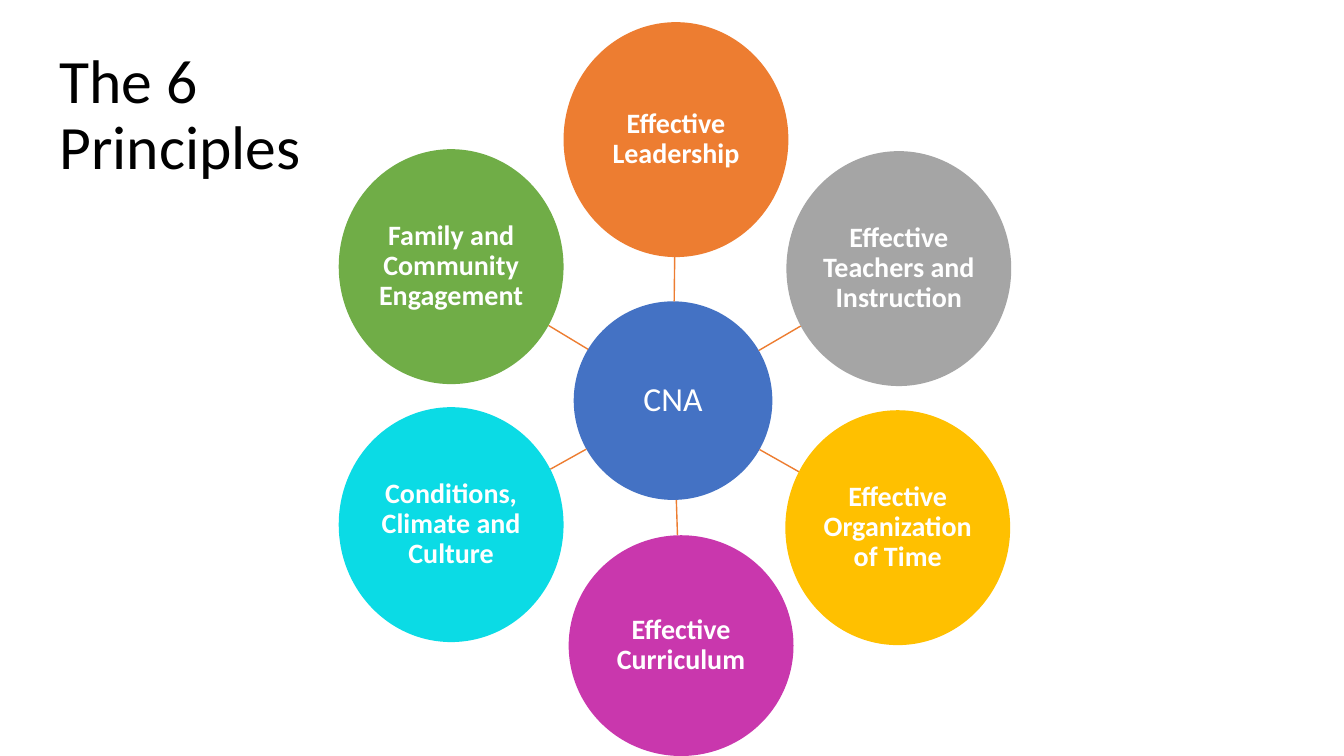
from dataclasses import dataclass
from math import hypot

from lxml import etree
from pptx import Presentation
from pptx.dml.color import RGBColor
from pptx.enum.shapes import MSO_CONNECTOR, MSO_SHAPE
from pptx.enum.text import MSO_ANCHOR, PP_ALIGN
from pptx.oxml.ns import qn
from pptx.util import Inches, Pt

OVAL = MSO_SHAPE.OVAL
LINE = MSO_CONNECTOR.STRAIGHT
MIDDLE = MSO_ANCHOR.MIDDLE
LEFT, CENTER = PP_ALIGN.LEFT, PP_ALIGN.CENTER
WIDE, HIGH = 13.33, 7.5


@dataclass(frozen=True)
class Theme:
    font: str = "Calibri"
    ink: str = "000000"
    light: str = "FFFFFF"
    hub: str = "4472C4"
    spoke: str = "ED7D31"
    title: int = 44
    core: int = 24
    label: int = 20
    thin: int = 1


THEME = Theme()

# Ovals: centre x, centre y, width, height in percent of the slide
HUB = (50.08, 53, 14.78, 26.27)
PETAL = (16.73, 31.07)
PETALS = [
    ("Effective Leadership", "ED7D31", (50.3, 18.47, *PETAL)),
    ("Effective Teachers and Instruction", "A5A5A5", (66.88, 35.53, *PETAL)),
    ("Effective Organization of Time", "FFC000", (66.8, 69.8, *PETAL)),
    ("Effective Curriculum", "C937AD", (50.68, 85.4, 16.73, 29.2)),
    ("Conditions, Climate and Culture", "0BDBE5", (33.57, 69.4, *PETAL)),
    ("Family and Community Engagement", "70AD47", (33.57, 35.27, *PETAL)),
]


def across(share):
    return Inches(WIDE * share / 100)


def down(share):
    return Inches(HIGH * share / 100)


def write(shape, text, *, size, color, bold=False, align=CENTER, inset=None):
    frame = shape.text_frame
    frame.word_wrap = True
    frame.vertical_anchor = MIDDLE
    if inset is not None:
        frame.margin_left = frame.margin_right = Inches(inset)
        frame.margin_top = frame.margin_bottom = Inches(inset)
    para = frame.paragraphs[0]
    para.alignment = align
    para.line_spacing = 0.9
    run = para.add_run()
    run.text = text
    run.font.name = THEME.font
    run.font.size = Pt(size)
    run.font.bold = bold
    run.font.color.rgb = RGBColor.from_string(color)


def add_oval(slide, text, fill, oval, **style):
    x, y, w, h = oval
    shape = slide.shapes.add_shape(
        OVAL, across(x - w / 2), down(y - h / 2), across(w), down(h))
    shape.shadow.inherit = False
    shape.fill.solid()
    shape.fill.fore_color.rgb = RGBColor.from_string(fill)
    shape.line.fill.background()
    write(shape, text, color=THEME.light, **style)


def rim(oval, goal):
    """Point where the line from an oval's centre to a goal leaves the oval."""
    x, y, w, h = oval
    dx, dy = goal[0] - x, goal[1] - y
    part = 1 / hypot(dx / (w / 2), dy / (h / 2))
    return across(x + dx * part), down(y + dy * part)


def add_spoke(slide, hub, petal):
    line = slide.shapes.add_connector(LINE, *rim(hub, petal), *rim(petal, hub))
    line.line.color.rgb = RGBColor.from_string(THEME.spoke)
    line.line.width = Pt(THEME.thin)
    etree.SubElement(line._element.spPr, qn("a:effectLst"))


def add_title(slide, text):
    box = slide.shapes.add_textbox(
        across(3.68), down(5.73), across(20.56), down(19.33))
    write(box, text, size=THEME.title, color=THEME.ink, align=LEFT)


def main():
    deck = Presentation()
    deck.slide_width, deck.slide_height = Inches(WIDE), Inches(HIGH)
    slide = deck.slides.add_slide(deck.slide_layouts[6])

    # Hub
    add_oval(slide, "CNA", THEME.hub, HUB, size=THEME.core, inset=0.02)

    # Principles around the hub
    for text, fill, oval in PETALS:
        add_spoke(slide, HUB, oval)
        add_oval(slide, text, fill, oval,
                 size=THEME.label, bold=True, inset=0.01)

    # Title
    add_title(slide, "The 6 Principles")
    deck.save("out.pptx")


if __name__ == "__main__":
    main()
